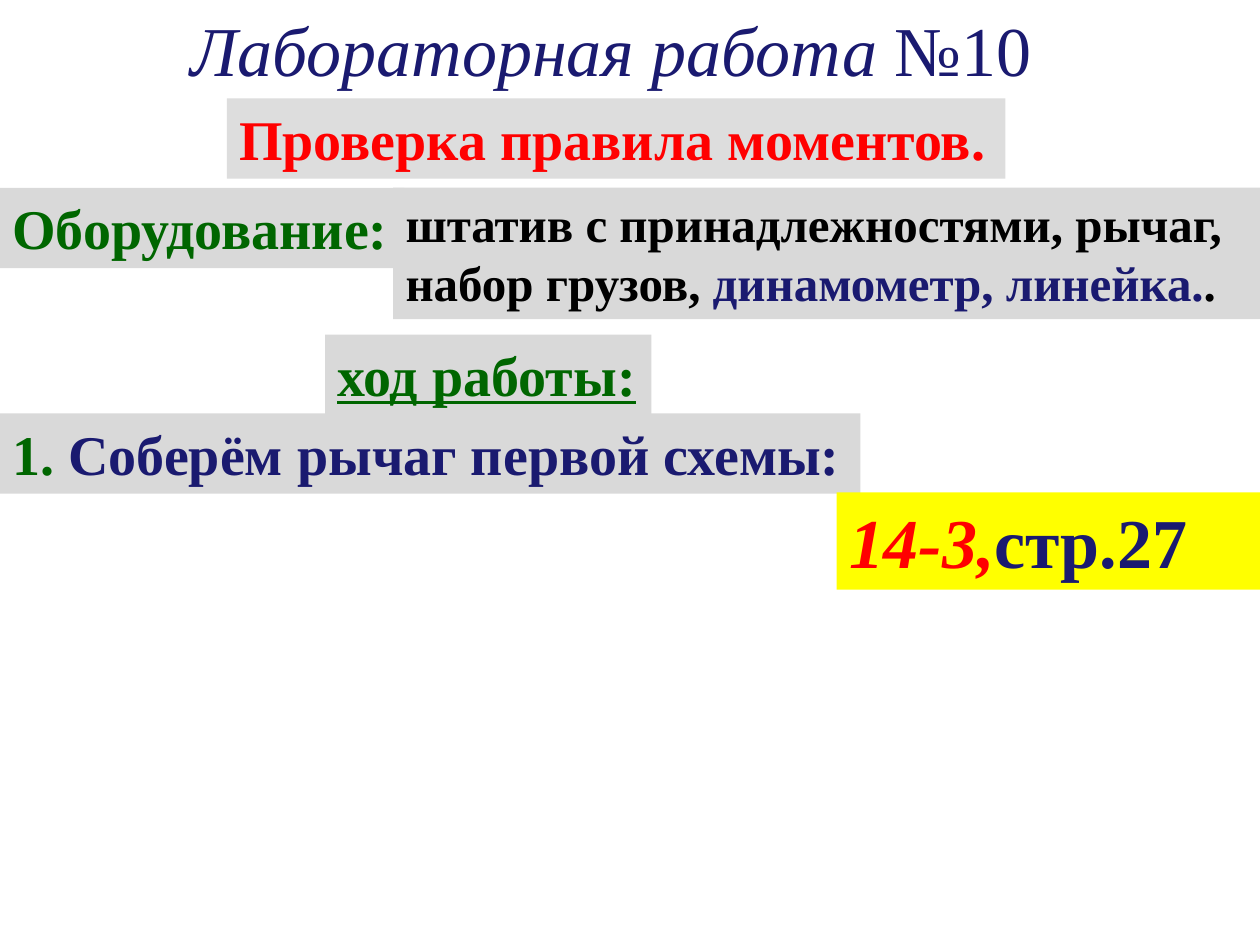
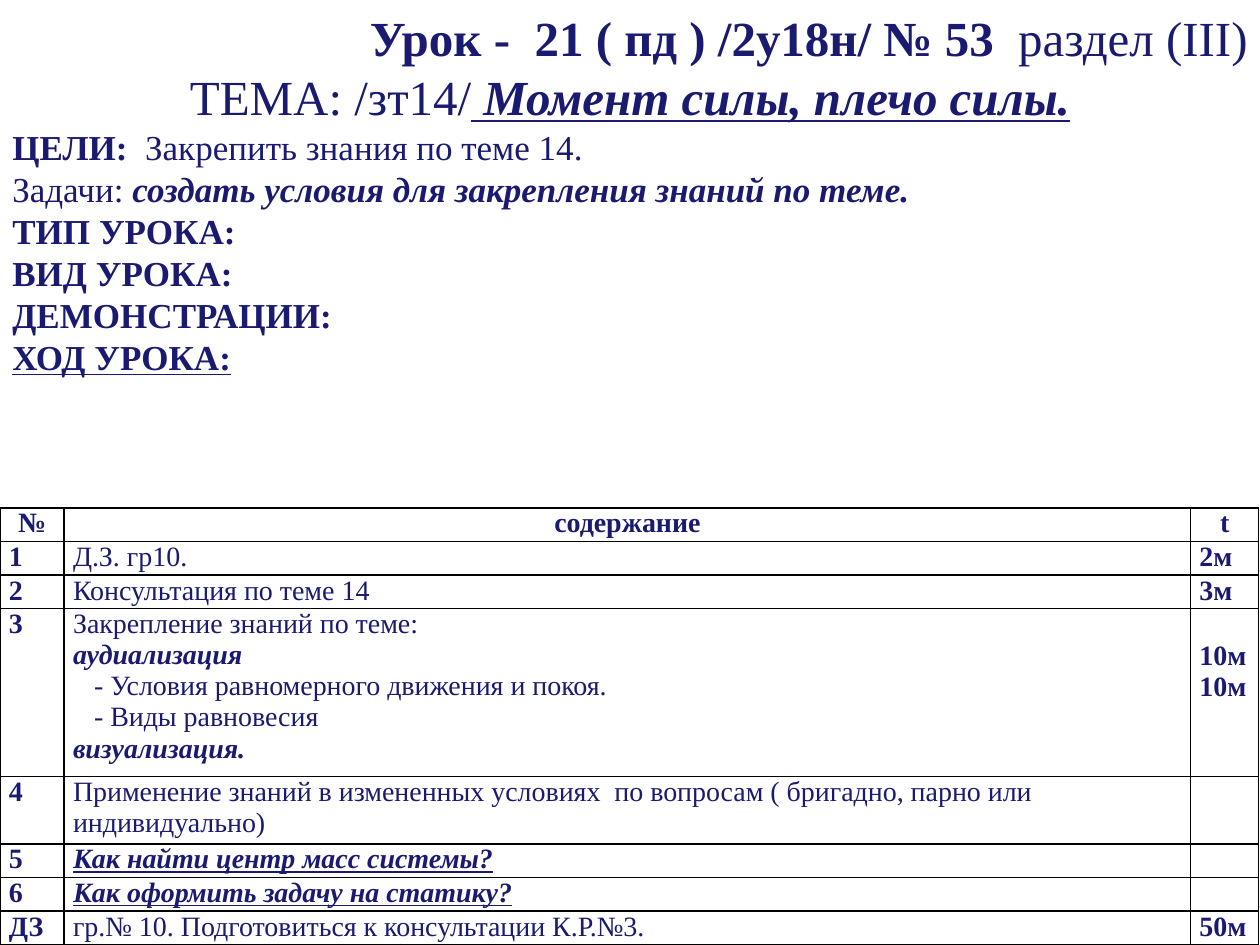
from lxml import etree
from pptx import Presentation, util as u
from pptx.dml.color import RGBColor
from pptx.enum import shapes, text
from pptx.oxml import ns

WIDTH, HEIGHT = u.Inches(10), u.Inches(7.5)
FONT = "Times New Roman"
NAVY = RGBColor(0x1A, 0x1A, 0x70)
RED = RGBColor(0xFF, 0, 0)
GREEN = RGBColor(0, 0x66, 0)
BLACK = RGBColor(0, 0, 0)
WHITE = RGBColor(0xFF, 0xFF, 0xFF)
PALE = RGBColor(0xDD, 0xDD, 0xDD)
GREY = RGBColor(0xD9, 0xD9, 0xD9)
YELLOW = RGBColor(0xFF, 0xFF, 0)
LEFT, CENTER, RIGHT = text.PP_ALIGN.LEFT, text.PP_ALIGN.CENTER, text.PP_ALIGN.RIGHT

# Left, top, width and height are percentages of the slide.
LAB_BANDS = [
    ((14.1, 0, 69.5, 10.3), WHITE, 40, False,
     [("Лабораторная работа ", "i", NAVY), ("№10", "", NAVY)]),
    ((18, 10.4, 61.8, 8.5), PALE, 32, False, [("Проверка правила моментов.", "b", RED)]),
    ((0, 19.87, 32.1, 8.5), GREY, 32, False, [("Оборудование:", "b", GREEN)]),
    ((31.2, 19.87, 68.8, 13.9), GREY, 28, True,
     [("штатив с принадлежностями, рычаг, набор грузов, ", "b", BLACK),
      ("динамометр, линейка.", "b", NAVY), (".", "b", BLACK)]),
    ((25.8, 35.4, 25.9, 8.5), GREY, 32, False, [("ход работы:", "bu", GREEN)]),
    ((0, 43.73, 68.3, 8.5), GREY, 32, False,
     [("1. ", "b", GREEN), ("Соберём рычаг первой схемы:", "b", NAVY)]),
    ((66.4, 52.1, 33.6, 10.3), YELLOW, 40, True,
     [("14-3,", "bi", RED), ("стр.27", "b", NAVY)]),
]

LESSON_HEADER = [
    (28, RIGHT, [("Урок -  21 ( пд ) /2у18н/ № 53  ", "b", NAVY), ("раздел (III)", "", NAVY)]),
    (28, CENTER, [("ТЕМА: /зт14/", "", NAVY), (" Момент силы, плечо силы.", "biu", NAVY)]),
    (20, LEFT, [("ЦЕЛИ: ", "b", NAVY), (" Закрепить знания по теме 14.", "", NAVY)]),
    (20, LEFT, [("Задачи: ", "", NAVY),
                ("создать условия для закрепления знаний по теме.", "bi", NAVY)]),
    (20, LEFT, [("ТИП УРОКА:", "b", NAVY)]),
    (20, LEFT, [("ВИД УРОКА:", "b", NAVY)]),
    (20, LEFT, [("ДЕМОНСТРАЦИИ:", "b", NAVY)]),
    (20, LEFT, [("ХОД УРОКА:", "bu", NAVY)]),
]

PLAN_HEAD = ("№", "содержание", "t")
PLAN = [
    ("1", [("Д.З. гр10.", "")], ["2м"]),
    ("2", [("Консультация по теме 14", "")], ["3м"]),
    ("3", [("Закрепление знаний по теме:", ""), ("аудиализация", "bi"),
           ("- Условия равномерного движения и покоя.", ""),
           ("- Виды равновесия", ""), ("визуализация.", "bi")], ["10м", "10м"]),
    ("4", [("Применение знаний в измененных условиях  по вопросам "
            "( бригадно, парно или индивидуально)", "")], []),
    ("5", [("Как найти центр масс системы?", "biu")], []),
    ("6", [("Как оформить задачу на статику?", "biu")], []),
    ("ДЗ", [("гр.№ 10. Подготовиться к консультации К.Р.№3.", "")], ["50м"]),
]
PLAN_SIZE = 16
PLAN_COLUMNS = (0.51, 8.94, 0.54)
PLAN_ROW, PLAN_TALL_ROW = 0.15, 0.76
PLAN_LINE = 0.25


def place(left, top, width, height):
    return (int(WIDTH * left / 100), int(HEIGHT * top / 100),
            int(WIDTH * width / 100), int(HEIGHT * height / 100))


def write(frame, paragraphs):
    for index, (size, alignment, runs) in enumerate(paragraphs):
        paragraph = frame.add_paragraph() if index else frame.paragraphs[0]
        paragraph.alignment = alignment
        for words, style, color in runs:
            run = paragraph.add_run()
            run.text = words
            font = run.font
            font.name, font.size = FONT, u.Pt(size)
            font.bold, font.italic, font.underline = (mark in style for mark in "biu")
            font.color.rgb = color


def add_band(slide, box, fill, size, wrap, runs):
    shape = slide.shapes.add_shape(shapes.MSO_SHAPE.RECTANGLE, *place(*box))
    shape.shadow.inherit = False
    shape.fill.solid()
    shape.fill.fore_color.rgb = fill
    shape.line.fill.background()
    frame = shape.text_frame
    frame.word_wrap = wrap
    frame.auto_size = text.MSO_AUTO_SIZE.SHAPE_TO_FIT_TEXT
    frame.vertical_anchor = text.MSO_ANCHOR.TOP
    write(frame, [(size, LEFT, runs)])


def add_borders(cell):
    properties = cell._tc.get_or_add_tcPr()
    for index, side in enumerate(("lnL", "lnR", "lnT", "lnB")):
        line = etree.Element(ns.qn("a:" + side), w=str(u.Pt(1)))
        fill = etree.SubElement(line, ns.qn("a:solidFill"))
        etree.SubElement(fill, ns.qn("a:srgbClr"), val=str(BLACK))
        properties.insert(index, line)


def fill_cell(cell, lines, alignment=LEFT):
    cell.margin_left = cell.margin_right = u.Inches(0.07)
    cell.margin_top = cell.margin_bottom = 0
    cell.fill.background()
    add_borders(cell)
    write(cell.text_frame,
          [(PLAN_SIZE, alignment, [(words, style, NAVY)]) for words, style in lines])
    for paragraph in cell.text_frame.paragraphs:
        if paragraph.text.startswith("- "):
            paragraph._p.get_or_add_pPr().set("marL", str(u.Pt(12)))
    if not lines:
        ending = etree.SubElement(cell.text_frame.paragraphs[0]._p, ns.qn("a:endParaRPr"))
        ending.set("sz", str(PLAN_SIZE * 100))


def add_plan(slide):
    heights = [PLAN_ROW] + [PLAN_TALL_ROW if len(row[1]) > 1 else PLAN_ROW for row in PLAN]
    table = slide.shapes.add_table(len(heights), len(PLAN_COLUMNS), 0, u.Inches(4.03),
                                   WIDTH, u.Inches(sum(heights))).table
    for column, width in zip(table.columns, PLAN_COLUMNS):
        column.width = u.Inches(width)
    for row, height in zip(table.rows, heights):
        row.height = u.Inches(height)
    for column, title in enumerate(PLAN_HEAD):
        fill_cell(table.cell(0, column), [(title, "b")], CENTER)
    for row, (number, content, times) in enumerate(PLAN, 1):
        fill_cell(table.cell(row, 0), [(number, "b")])
        fill_cell(table.cell(row, 1), content)
        time_cell = table.cell(row, 2)
        fill_cell(time_cell, [(time, "b") for time in times])
        if len(times) > 1:
            time_cell.margin_top = u.Inches(PLAN_LINE)


def add_header(slide):
    frame = slide.shapes.add_textbox(*place(0, 0, 100, 40.8)).text_frame
    frame.word_wrap = True
    frame.auto_size = text.MSO_AUTO_SIZE.SHAPE_TO_FIT_TEXT
    frame.vertical_anchor = text.MSO_ANCHOR.MIDDLE
    write(frame, LESSON_HEADER)


presentation = Presentation()
presentation.slide_width, presentation.slide_height = WIDTH, HEIGHT
blank = presentation.slide_layouts[6]

lab_slide = presentation.slides.add_slide(blank)
for band in LAB_BANDS:
    add_band(lab_slide, *band)

lesson_slide = presentation.slides.add_slide(blank)
add_plan(lesson_slide)
add_header(lesson_slide)

presentation.save("out.pptx")
